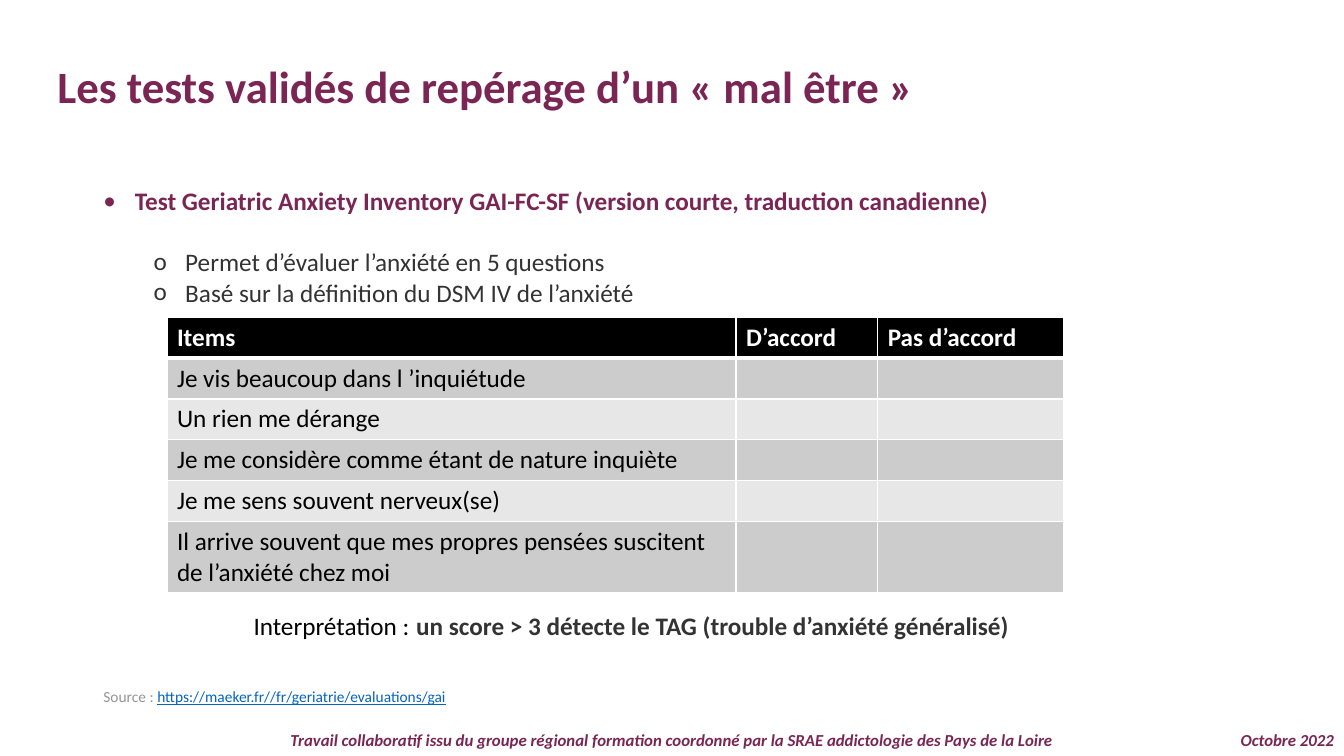
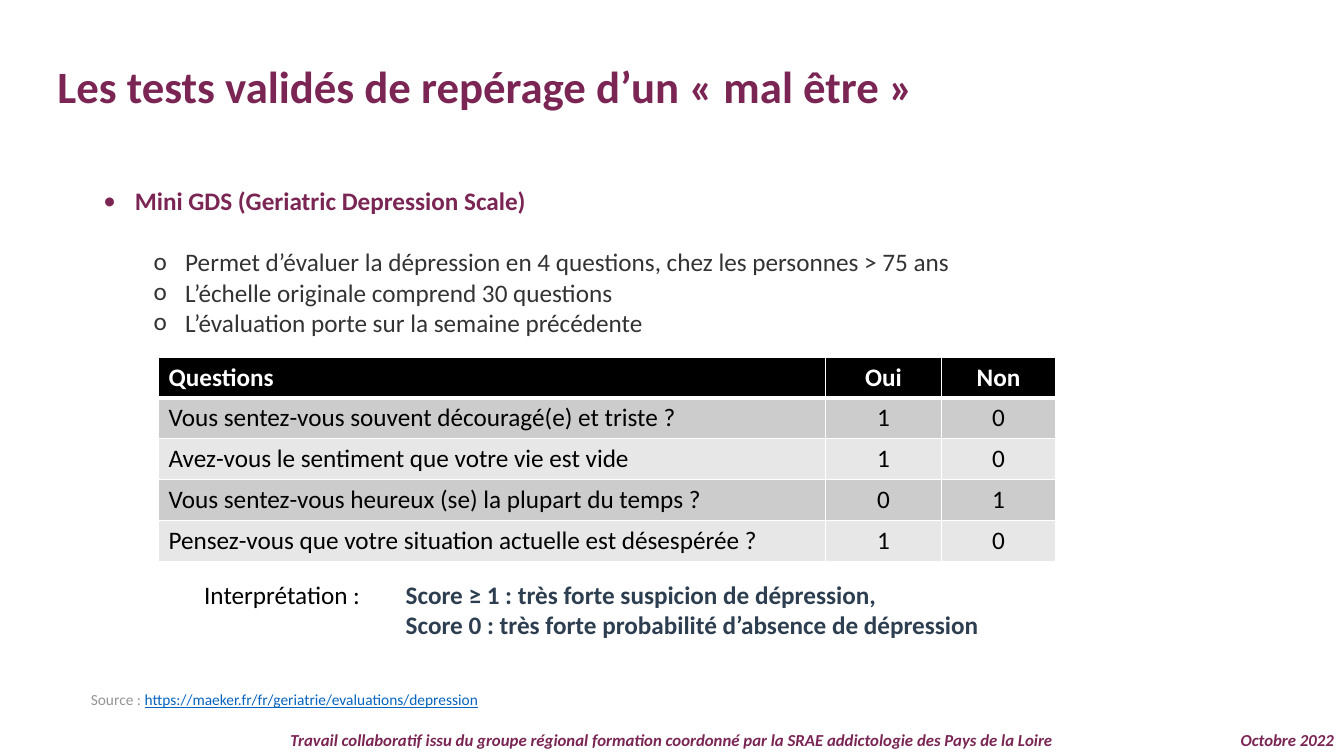
from lxml import etree
from pptx import Presentation
from pptx.dml.color import RGBColor
from pptx.enum.text import MSO_ANCHOR, MSO_AUTO_SIZE, PP_ALIGN
from pptx.oxml.ns import qn
from pptx.util import Pt

PX = 9525
LEFT, MID, RIGHT = PP_ALIGN.LEFT, PP_ALIGN.CENTER, PP_ALIGN.RIGHT
CENTER = MSO_ANCHOR.MIDDLE
FIXED = MSO_AUTO_SIZE.NONE
FONT = "Calibri"
PLUM, GREY, NAVY = "7A2553", "333333", "2C3E50"
BLACK, WHITE, PALE, LINK = "000000", "FFFFFF", "949594", "0563C1"
BANDS = ["CCCCCC", "E7E7E7"]
TITLE = "Les tests validés de repérage d’un « mal être »"
FOOT = ("Travail collaboratif issu du groupe régional formation "
        "coordonné par la SRAE addictologie des Pays de la Loire")
DATE = "Octobre 2022"

PAGES = [
    {
        "head": "Test Geriatric Anxiety Inventory GAI-FC-SF (version courte, traduction canadienne)",
        "points": ["Permet d’évaluer l’anxiété en 5 questions",
                   "Basé sur la définition du DSM IV de l’anxiété"],
        "spot": (159, 302),
        "cols": [542, 135, 177],
        "rows": [39, 39, 39, 39, 39, 67],
        "align": LEFT,
        "cells": [["Items", "D’accord", "Pas d’accord"],
                  ["Je vis beaucoup dans l ’inquiétude", "", ""],
                  ["Un rien me dérange", "", ""],
                  ["Je me considère comme étant de nature inquiète", "", ""],
                  ["Je me sens souvent nerveux(se)", "", ""],
                  ["Il arrive souvent que mes propres pensées suscitent de l’anxiété chez moi", "", ""]],
        "label": (232, 577),
        "score": (387, 577),
        "tint": GREY,
        "result": ["un score > 3 détecte le TAG (trouble d’anxiété généralisé)"],
        "source": (89, 650),
        "url": "https://maeker.fr//fr/geriatrie/evaluations/gai",
    },
    {
        "head": "Mini GDS (Geriatric Depression Scale)",
        "points": ["Permet d’évaluer la dépression en 4 questions, chez les personnes > 75 ans",
                   "L’échelle originale comprend 30 questions",
                   "L’évaluation porte sur la semaine précédente"],
        "spot": (151, 340),
        "cols": [635, 111, 108],
        "rows": [39] * 5,
        "align": MID,
        "cells": [["Questions", "Oui", "Non"],
                  ["Vous sentez-vous souvent découragé(e) et triste ?", "1", "0"],
                  ["Avez-vous le sentiment que votre vie est vide", "1", "0"],
                  ["Vous sentez-vous heureux (se) la plupart du temps ?", "0", "1"],
                  ["Pensez-vous que votre situation actuelle est désespérée ?", "1", "0"]],
        "label": (185, 547),
        "score": (377, 547),
        "tint": NAVY,
        "result": ["Score ≥ 1 : très forte suspicion de dépression,",
                   "Score 0 : très forte probabilité d’absence de dépression"],
        "source": (77, 653),
        "url": "https://maeker.fr/fr/geriatrie/evaluations/depression",
    },
]


def box(slide, x, y, w, h):
    frame = slide.shapes.add_textbox(x * PX, y * PX, w * PX, h * PX).text_frame
    frame.word_wrap = True
    return frame


def write(frame, text, size=18, color=BLACK, bold=False, italic=False, under=False,
          align=LEFT, bullet=None, inset=0, before=0, space=1.0, join=False):
    para = frame.paragraphs[-1]
    if para.runs and not join:
        para = frame.add_paragraph()
    if not join:
        para.alignment = align
        para.line_spacing = space
        para.space_before = Pt(before)
    if bullet:
        props = para._p.get_or_add_pPr()
        props.set("marL", str(inset * PX))
        props.set("indent", str(-30 * PX))
        etree.SubElement(props, qn("a:buFont")).set("typeface", FONT)
        etree.SubElement(props, qn("a:buChar")).set("char", bullet)
    run = para.add_run()
    run.text = text
    font = run.font
    font.name, font.size = FONT, Pt(size)
    font.bold, font.italic, font.underline = bold, italic, under
    font.color.rgb = RGBColor.from_string(color)


deck = Presentation()
deck.slide_width, deck.slide_height = 1280 * PX, 720 * PX

for page in PAGES:
    slide = deck.slides.add_slide(deck.slide_layouts[5])

    title = slide.shapes.title
    title.left, title.top, title.width, title.height = 45 * PX, 51 * PX, 1220 * PX, 61 * PX
    title.text_frame.auto_size = FIXED
    title.text_frame.vertical_anchor = CENTER
    write(title.text_frame, TITLE, size=32, color=PLUM, bold=True)

    for x, w, text, align in [(0, 1280, FOOT, MID), (1130, 150, DATE, RIGHT)]:
        foot = box(slide, x, 691, w, 29)
        foot.vertical_anchor = CENTER
        write(foot, text, size=12, color=PLUM, bold=True, italic=True, align=align, space=0.9)

    body = box(slide, 89, 172, 1139, 160)
    write(body, page["head"], color=PLUM, bold=True, bullet="•", inset=30)
    for i, point in enumerate(page["points"]):
        write(body, point, color=GREY, bullet="o", inset=78, before=0 if i else 22)

    cols, rows = page["cols"], page["rows"]
    x, y = page["spot"]
    grid = slide.shapes.add_table(len(rows), len(cols), x * PX, y * PX,
                                  sum(cols) * PX, sum(rows) * PX).table
    for c, width in enumerate(cols):
        grid.columns[c].width = width * PX
    for r, height in enumerate(rows):
        grid.rows[r].height = height * PX
        for c, text in enumerate(page["cells"][r]):
            cell = grid.cell(r, c)
            props = cell._tc.get_or_add_tcPr()
            for side in ["lnL", "lnR", "lnT", "lnB"]:
                thick = (r == 0 and side == "lnB") or (r == 1 and side == "lnT")
                edge = etree.SubElement(props, qn("a:" + side), w=str(Pt(3 if thick else 1)))
                fill = etree.SubElement(edge, qn("a:solidFill"))
                etree.SubElement(fill, qn("a:srgbClr"), val=WHITE)
            cell.fill.solid()
            cell.fill.fore_color.rgb = RGBColor.from_string(BANDS[(r - 1) % 2] if r else BLACK)
            if text:
                write(cell.text_frame, text, color=BLACK if r else WHITE, bold=r == 0,
                      align=page["align"] if c else LEFT)

    write(box(slide, *page["label"], 190, 39), "Interprétation :")
    score = box(slide, *page["score"], 680, 29 * len(page["result"]) + 10)
    for text in page["result"]:
        write(score, text, color=page["tint"], bold=True)

    source = box(slide, *page["source"], 644, 28)
    write(source, "Source : ", size=11, color=PALE)
    write(source, page["url"], size=11, color=LINK, under=True, join=True)

deck.save("out.pptx")
